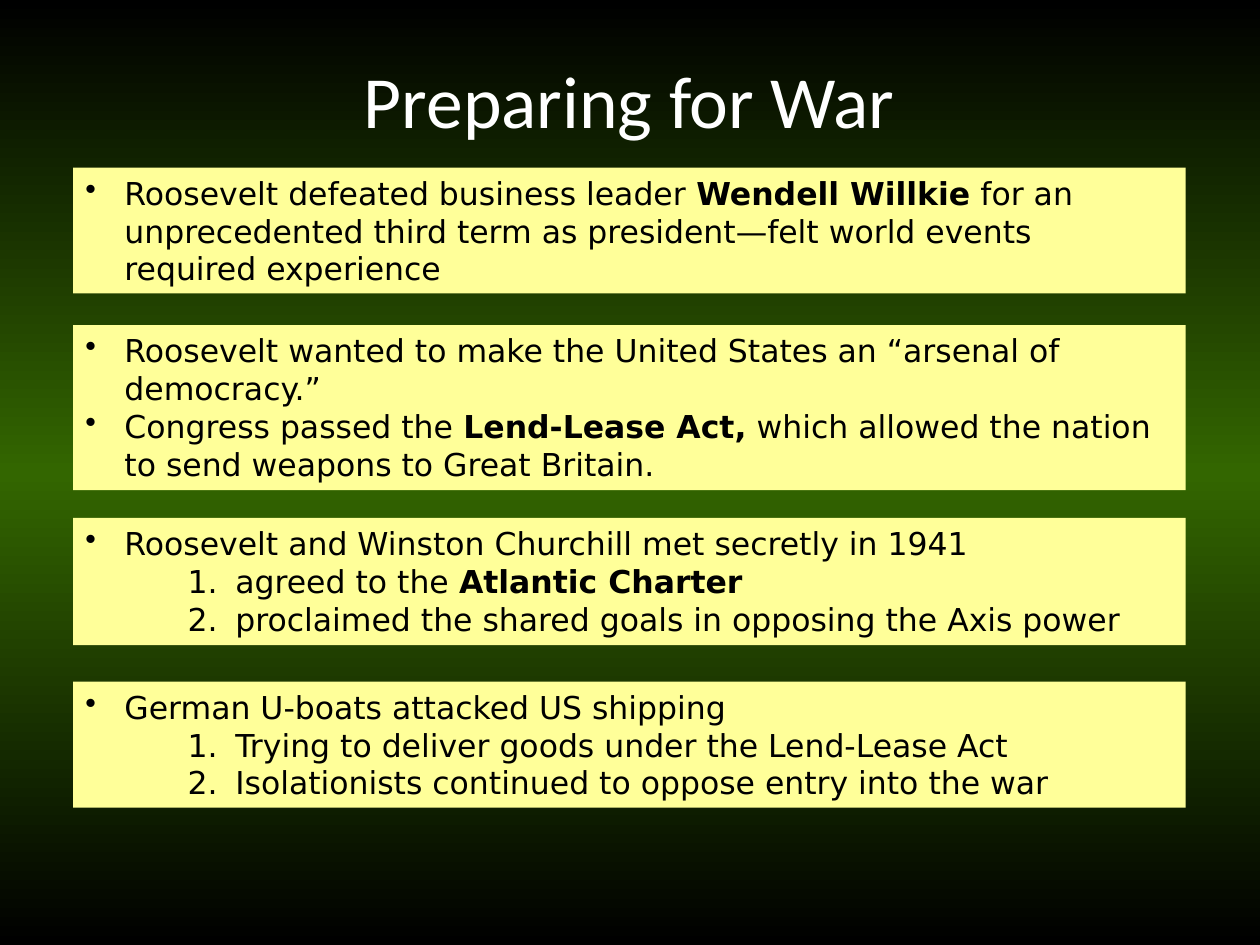
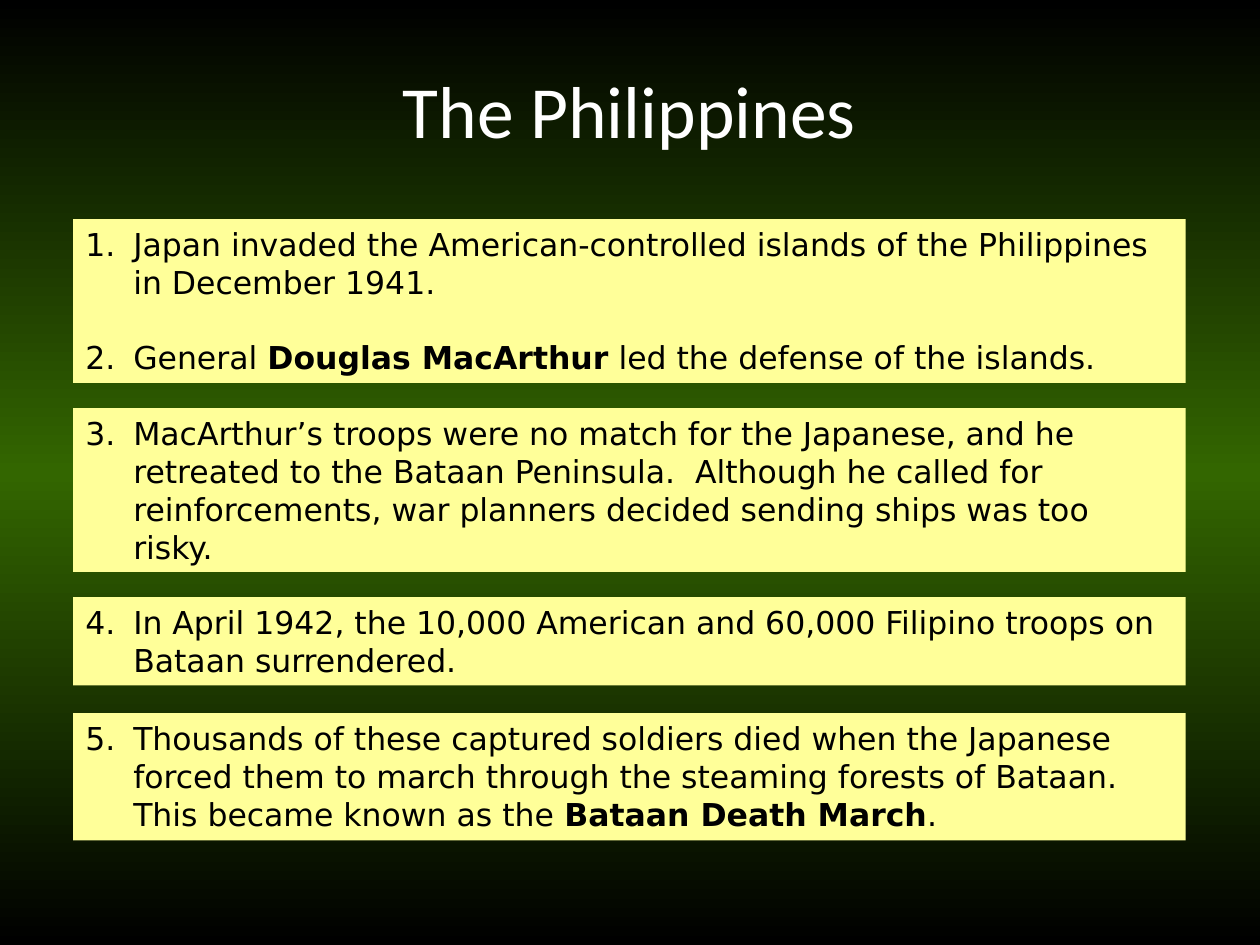
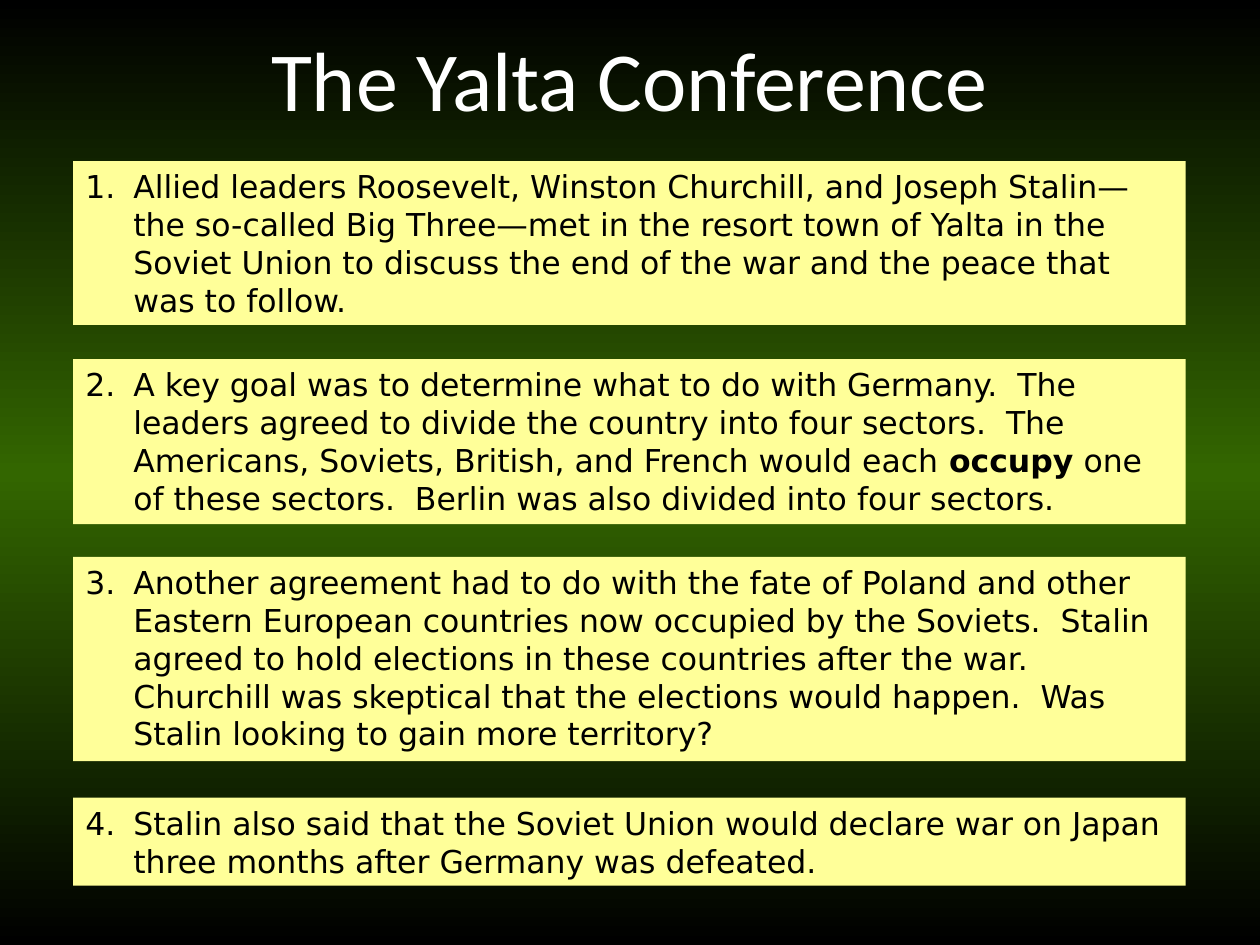
"""Build three history slides with yellow text panels on a green gradient."""
from copy import deepcopy

from lxml import etree
from pptx import Presentation
from pptx.dml.color import RGBColor
from pptx.enum import shapes, text
from pptx.oxml import ns
from pptx.util import Inches, Pt

COLORS = {"edge": "000000", "glow": "336600", "panel": "FFFF99",
          "body": "000000", "title": "FFFFFF"}
FONTS = {"title": "Calibri", "body": "DejaVu Sans"}
BODY_SIZE = 18
ITEM_GAP = 21
PANEL_LEFT, PANEL_WIDTH = 0.58, 8.83
TITLE_HEIGHT = 0.58
INDENTS = {"dot": (0.31, 0.31), "number": (0.38, 0.38), "step": (1.19, 0.38)}

SLIDES = [
    {"title": "Preparing for War", "size": 42, "box": (0.58, 0.5, 8.83),
     "panels": [
         (1.33, 1, 1, [
             ("dot", "Roosevelt defeated business leader **Wendell Willkie** for an "
                     "unprecedented third term as president—felt world events "
                     "required experience")]),
         (2.58, 1.31, 1, [
             ("dot", "Roosevelt wanted to make the United States an “arsenal of "
                     "democracy.”"),
             ("dot", "Congress passed the **Lend-Lease Act,** which allowed the "
                     "nation to send weapons to Great Britain.")]),
         (4.11, 1.01, 1, [
             ("dot", "Roosevelt and Winston Churchill met secretly in 1941"),
             ("step", "agreed to the **Atlantic Charter**"),
             ("step", "proclaimed the shared goals in opposing the Axis power")]),
         (5.41, 1, 1, [
             ("dot", "German U-boats attacked US shipping"),
             ("step", "Trying to deliver goods under the Lend-Lease Act"),
             ("step", "Isolationists continued to oppose entry into the war")]),
     ]},
    {"title": "The Philippines", "size": 42, "box": (0.58, 0.58, 8.83),
     "panels": [
         (1.74, 1.3, 1, [
             ("number", "Japan invaded the American-controlled islands of the "
                        "Philippines in December 1941."),
             ("number", "General **Douglas MacArthur** led the defense of the "
                        "islands.")]),
         (3.24, 1.3, 3, [
             ("number", "MacArthur’s troops were no match for the Japanese, and he "
                        "retreated to the Bataan Peninsula.  Although he called for "
                        "reinforcements, war planners decided sending ships was too "
                        "risky.")]),
         (4.74, 0.7, 4, [
             ("number", "In April 1942, the 10,000 American and 60,000 Filipino "
                        "troops on Bataan surrendered.")]),
         (5.66, 1.01, 5, [
             ("number", "Thousands of these captured soldiers died when the Japanese "
                        "forced them to march through the steaming forests of "
                        "Bataan.  This became known as the **Bataan Death March**.")]),
     ]},
    {"title": "The Yalta Conference", "size": 48, "box": (0.33, 0.33, 9.33),
     "panels": [
         (1.28, 1.3, 1, [
             ("number", "Allied leaders Roosevelt, Winston Churchill, and Joseph "
                        "Stalin—the so-called Big Three—met in the resort town of "
                        "Yalta in the Soviet Union to discuss the end of the war and "
                        "the peace that was to follow.")]),
         (2.85, 1.31, 2, [
             ("number", "A key goal was to determine what to do with Germany.  The "
                        "leaders agreed to divide the country into four sectors.  "
                        "The Americans, Soviets, British, and French would each "
                        "**occupy** one of these sectors.  Berlin was also divided "
                        "into four sectors.")]),
         (4.42, 1.62, 3, [
             ("number", "Another agreement had to do with the fate of Poland and "
                        "other Eastern European countries now occupied by the "
                        "Soviets.  Stalin agreed to hold elections in these "
                        "countries after the war.  Churchill was skeptical that the "
                        "elections would happen.  Was Stalin looking to gain more "
                        "territory?")]),
         (6.33, 0.7, 4, [
             ("number", "Stalin also said that the Soviet Union would declare war on "
                        "Japan three months after Germany was defeated.")]),
     ]},
]


def color(name):
    """Return the named palette colour."""
    return RGBColor.from_string(COLORS[name])


def style_font(font, role, size, bold=False):
    """Apply the typeface and colour of a text role."""
    font.name = FONTS[role]
    font.size = Pt(size)
    font.bold = bold
    font.color.rgb = color(role)


def paint_background(master):
    """Give the master a vertical gradient that glows in the middle."""
    fill = master.background.fill
    fill.gradient()
    fill.gradient_angle = 270
    stops = master.element.find(".//" + ns.qn("a:gsLst"))
    stops.insert(1, deepcopy(stops[0]))
    for stop, position, name in zip(fill.gradient_stops, (0, 0.5, 1),
                                    ("edge", "glow", "edge")):
        stop.position = position
        stop.color.rgb = color(name)


def place_title(slide, wording, size, box):
    """Move and format the title placeholder."""
    heading = slide.shapes.title
    heading.left, heading.top, heading.width = map(Inches, box)
    heading.height = Inches(TITLE_HEIGHT)
    frame = heading.text_frame
    frame.text = wording
    frame.auto_size = text.MSO_AUTO_SIZE.NONE
    frame.vertical_anchor = text.MSO_ANCHOR.MIDDLE
    line = frame.paragraphs[0]
    line.alignment = text.PP_ALIGN.CENTER
    style_font(line.runs[0].font, "title", size)


def set_marker(paragraph, kind, start):
    """Indent a paragraph and give it a bullet or a number."""
    props = paragraph._p.get_or_add_pPr()
    margin, hanging = INDENTS[kind]
    props.set("marL", str(Inches(margin)))
    props.set("indent", str(-Inches(hanging)))
    if kind == "dot":
        etree.SubElement(props, ns.qn("a:buChar"), char="•")
    else:
        number = etree.SubElement(props, ns.qn("a:buAutoNum"), type="arabicPeriod")
        if start > 1:
            number.set("startAt", str(start))


def write_item(paragraph, kind, wording, start):
    """Write one list item, with the parts between ** in bold."""
    paragraph.alignment = text.PP_ALIGN.LEFT
    paragraph.level = 1 if kind == "step" else 0
    set_marker(paragraph, kind, start)
    for index, part in enumerate(wording.split("**")):
        if part:
            run = paragraph.add_run()
            run.text = part
            style_font(run.font, "body", BODY_SIZE, bold=index % 2 == 1)


def add_panel(slide, top, height, start, items):
    """Add a yellow panel holding a list."""
    panel = slide.shapes.add_shape(
        shapes.MSO_SHAPE.RECTANGLE,
        *map(Inches, (PANEL_LEFT, top, PANEL_WIDTH, height)))
    panel.shadow.inherit = False
    panel.fill.solid()
    panel.fill.fore_color.rgb = color("panel")
    panel.line.fill.background()
    frame = panel.text_frame
    frame.word_wrap = True
    frame.auto_size = text.MSO_AUTO_SIZE.SHAPE_TO_FIT_TEXT
    frame.vertical_anchor = text.MSO_ANCHOR.TOP
    for index, (kind, wording) in enumerate(items):
        paragraph = frame.add_paragraph() if index else frame.paragraphs[0]
        write_item(paragraph, kind, wording, start)
        if index and kind == "number":
            paragraph.space_before = Pt(ITEM_GAP)


def main():
    """Build and save the slides."""
    deck = Presentation()
    deck.slide_width, deck.slide_height = Inches(10), Inches(7.5)
    paint_background(deck.slide_master)
    for content in SLIDES:
        slide = deck.slides.add_slide(deck.slide_layouts.get_by_name("Title Only"))
        place_title(slide, content["title"], content["size"], content["box"])
        for panel in content["panels"]:
            add_panel(slide, *panel)
    deck.save("out.pptx")


if __name__ == "__main__":
    main()
